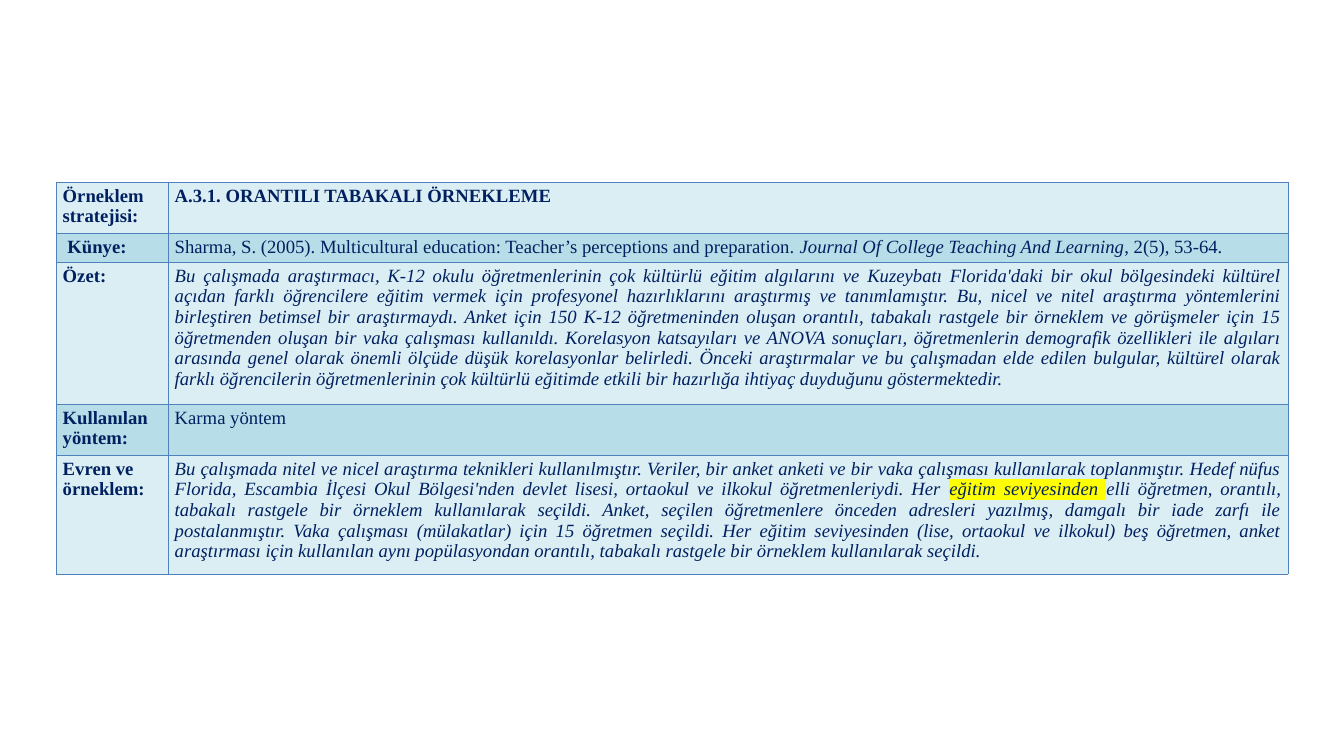
from lxml import etree
from pptx import Presentation
from pptx.dml.color import RGBColor
from pptx.enum.text import PP_ALIGN
from pptx.oxml.ns import qn
from pptx.util import Pt

EMU_PER_PX = 914400 / 67.2
LEFT = PP_ALIGN.LEFT
JUSTIFY = PP_ALIGN.JUSTIFY

NAVY = RGBColor(0x00, 0x20, 0x60)
BORDER_BLUE = RGBColor(0x4F, 0x81, 0xBD)
PALE_BLUE = RGBColor(0xDB, 0xEE, 0xF4)
LIGHT_BLUE = RGBColor(0xB7, 0xDE, 0xE8)
YELLOW = RGBColor(0xFF, 0xFF, 0x00)

COLUMN_WIDTHS = [112, 1120]
ROW_HEIGHTS = [51, 29, 142, 51, 119]

ITALIC = {"italic": True}

ABSTRACT_SENTENCES = [
    "Bu çalışmada araştırmacı, K-12 okulu öğretmenlerinin çok kültürlü eğitim "
    "algılarını ve Kuzeybatı Florida'daki bir okul bölgesindeki kültürel "
    "açıdan farklı öğrencilere eğitim vermek için profesyonel hazırlıklarını "
    "araştırmış ve tanımlamıştır.",
    "Bu, nicel ve nitel araştırma yöntemlerini birleştiren betimsel bir "
    "araştırmaydı.",
    "Anket için 150 K-12 öğretmeninden oluşan orantılı, tabakalı rastgele bir "
    "örneklem ve görüşmeler için 15 öğretmenden oluşan bir vaka çalışması "
    "kullanıldı.",
    "Korelasyon katsayıları ve ANOVA sonuçları, öğretmenlerin demografik "
    "özellikleri ile algıları arasında genel olarak önemli ölçüde düşük "
    "korelasyonlar belirledi.",
    "Önceki araştırmalar ve bu çalışmadan elde edilen bulgular, kültürel "
    "olarak farklı öğrencilerin öğretmenlerinin çok kültürlü eğitimde etkili "
    "bir hazırlığa ihtiyaç duyduğunu göstermektedir.",
]

# Each row: label, label alignment, runs of the description as (text, format).
ROWS = [
    ("Örneklem stratejisi:", JUSTIFY,
     [("A.3.1. ORANTILI TABAKALI ÖRNEKLEME", {"bold": True})]),
    (" Künye:", JUSTIFY, [
        ("Sharma, S. (2005). Multicultural education: Teacher’s perceptions "
         "and preparation. ", {}),
        ("Journal Of College Teaching And Learning", ITALIC),
        (", 2(5), 53-64.", {}),
    ]),
    ("Özet:", JUSTIFY, [(" ".join(ABSTRACT_SENTENCES), ITALIC)]),
    ("Kullanılan yöntem:", JUSTIFY, [("Karma yöntem", {})]),
    ("Evren ve örneklem:", LEFT, [
        ("Bu çalışmada nitel ve nicel araştırma teknikleri kullanılmıştır. "
         "Veriler, bir anket anketi ve bir vaka çalışması kullanılarak "
         "toplanmıştır. Hedef nüfus Florida, Escambia İlçesi Okul "
         "Bölgesi'nden devlet lisesi, ortaokul ve ilkokul öğretmenleriydi. "
         "Her ", ITALIC),
        ("eğitim seviyesinden ", {"italic": True, "highlight": YELLOW}),
        ("elli öğretmen, orantılı, tabakalı rastgele bir örneklem "
         "kullanılarak seçildi. Anket, seçilen öğretmenlere önceden adresleri "
         "yazılmış, damgalı bir iade zarfı ile postalanmıştır. Vaka çalışması "
         "(mülakatlar) için 15 öğretmen seçildi. Her eğitim seviyesinden "
         "(lise, ortaokul ve ilkokul) beş öğretmen, anket araştırması için "
         "kullanılan aynı popülasyondan orantılı, tabakalı rastgele bir "
         "örneklem kullanılarak seçildi.", ITALIC),
    ]),
]


def px(length):
    return round(length * EMU_PER_PX)


def add_solid_fill(parent, color):
    fill = etree.SubElement(parent, qn("a:solidFill"))
    etree.SubElement(fill, qn("a:srgbClr"), val=str(color))


def add_text(paragraph, text, size=20, font="Times New Roman", color=NAVY,
             bold=False, italic=False, highlight=None):
    run = paragraph.add_run()
    run.text = text
    run.font.size = Pt(size)
    run.font.name = font
    run.font.bold = bold
    run.font.italic = italic
    run.font.color.rgb = color
    if highlight is not None:
        mark = etree.Element(qn("a:highlight"))
        etree.SubElement(mark, qn("a:srgbClr"), val=str(highlight))
        run.font._element.find(qn("a:solidFill")).addnext(mark)


class SlideBuilder:
    """Holds the table style and the slide being filled."""

    border_color = BORDER_BLUE
    border_width = Pt(1)
    row_fills = (PALE_BLUE, LIGHT_BLUE)

    def __init__(self, slide):
        self.slide = slide

    def add_table(self, left, top, column_widths, row_heights, rows):
        frame = self.slide.shapes.add_table(
            len(row_heights), len(column_widths), px(left), px(top),
            px(sum(column_widths)), px(sum(row_heights)))
        table = frame.table
        for column, width in zip(table.columns, column_widths):
            column.width = px(width)
        for index, (label, alignment, runs) in enumerate(rows):
            table.rows[index].height = px(row_heights[index])
            fill = self.row_fills[index % 2]
            self.fill_cell(table.cell(index, 0), fill, alignment,
                           [(label, {"bold": True})])
            self.fill_cell(table.cell(index, 1), fill, JUSTIFY, runs)

    def fill_cell(self, cell, fill, alignment, runs):
        cell.fill.solid()
        cell.fill.fore_color.rgb = fill
        self.add_borders(cell)
        paragraph = cell.text_frame.paragraphs[0]
        paragraph.alignment = alignment
        for text, text_format in runs:
            add_text(paragraph, text, **text_format)

    def add_borders(self, cell):
        """Line all four sides; the schema wants borders before the fill."""
        properties = cell._tc.get_or_add_tcPr()
        for position, side in enumerate(("a:lnL", "a:lnR", "a:lnT", "a:lnB")):
            line = etree.Element(qn(side), w=str(self.border_width))
            add_solid_fill(line, self.border_color)
            properties.insert(position, line)


def main():
    presentation = Presentation()
    presentation.slide_width = px(1344)
    presentation.slide_height = px(756)
    blank_layout = presentation.slide_layouts[6]
    builder = SlideBuilder(presentation.slides.add_slide(blank_layout))
    builder.add_table(56, 182, COLUMN_WIDTHS, ROW_HEIGHTS, ROWS)
    presentation.save("out.pptx")


if __name__ == "__main__":
    main()
